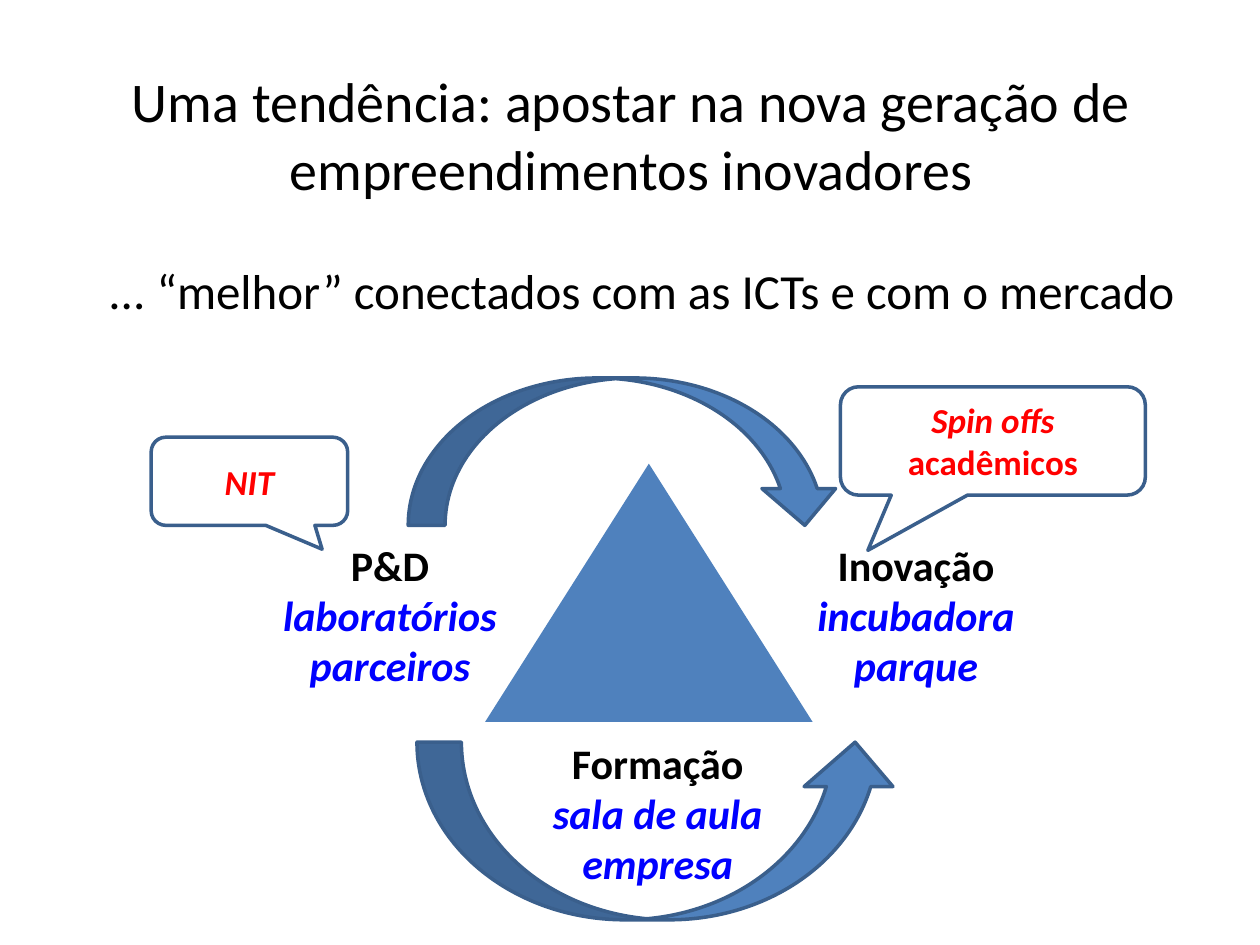
import pptx
import pptx.util
import pptx.dml.color
import pptx.enum.shapes
import pptx.enum.text

Inches = pptx.util.Inches
Kind = pptx.enum.shapes.MSO_SHAPE
Anchor = pptx.enum.text.MSO_ANCHOR
BLACK, BLUE, RED = "000000", "0000FF", "FF0000"
FILL, EDGE = "4F81BD", "3A5F8C"


def color(code):
    return pptx.dml.color.RGBColor.from_string(code)


def write(frame, *lines, size=24, wrap=True, anchor=Anchor.TOP):
    """Fill a frame; each line is a list of (text, colour, bold, italic)."""
    frame.word_wrap = wrap
    frame.vertical_anchor = anchor
    for i, line in enumerate(lines):
        para = frame.paragraphs[0] if i == 0 else frame.add_paragraph()
        para.alignment = pptx.enum.text.PP_ALIGN.CENTER
        for text, code, bold, italic in line:
            run = para.add_run()
            run.text = text
            font = run.font
            font.name, font.size = "Calibri", pptx.util.Pt(size)
            font.bold, font.italic = bold, italic
            font.color.rgb = color(code)


def draw(slide, kind, box, fill=None, edge=None):
    shape = slide.shapes.add_shape(kind, *map(Inches, box))
    shape.shadow.inherit = False
    if fill:
        shape.fill.solid()
        shape.fill.fore_color.rgb = color(fill)
    else:
        shape.fill.background()
    if edge:
        shape.line.color.rgb = color(edge)
        shape.line.width = pptx.util.Pt(2)
    else:
        shape.line.fill.background()
    return shape


def header(slide, box):
    left, top, width, height = box
    title = slide.shapes.title
    title.left, title.top = Inches(left), Inches(top)
    title.width, title.height = Inches(width), Inches(height)
    text = "Uma tendência: apostar na nova geração de empreendimentos inovadores"
    write(title.text_frame, [(text, BLACK, False, False)], size=32,
          anchor=Anchor.MIDDLE)
    lead = slide.shapes.add_textbox(
        Inches(left + 0.08), Inches(top + 1.58), Inches(width), Inches(0.82))
    text = "... “melhor” conectados com as ICTs e com o mercado"
    write(lead.text_frame, [(text, BLACK, False, False)], size=28)


def corner(slide, box, head, *items):
    label = slide.shapes.add_textbox(*map(Inches, box))
    write(label.text_frame, [(head, BLACK, True, False)],
          *([(item, BLUE, True, True)] for item in items), wrap=False)


def callout(slide, box, tip, *runs):
    shape = draw(slide, Kind.ROUNDED_RECTANGULAR_CALLOUT, box, edge=EDGE)
    shape.adjustments[0], shape.adjustments[1] = tip
    write(shape.text_frame, list(runs), size=20, anchor=Anchor.MIDDLE)


def cycle(slide, box):
    """Triangle with a label at each corner, two arrows and two callouts."""
    left, top, _, _ = box

    def at(x, y, width, height):
        return left + x, top + y, width, height

    draw(slide, Kind.FLOWCHART_EXTRACT, at(2.65, 0.68, 2.6, 2.05), FILL)
    corner(slide, at(0.94, 1.23, 1.91, 1.31),
           "P&D", "laboratórios", "parceiros")
    corner(slide, at(5.18, 1.23, 1.78, 1.31),
           "Inovação", "incubadora", "parque")
    corner(slide, at(3.08, 2.8, 1.88, 1.31),
           "Formação", "sala de aula", "empresa")
    callout(slide, at(5.47, 0.07, 2.42, 0.86), (-0.41, 1.01),
            ("Spin offs ", RED, True, True),
            ("acadêmicos", RED, True, False))
    draw(slide, Kind.CURVED_UP_ARROW, at(2.11, 2.89, 3.83, 1.41), FILL, EDGE)
    draw(slide, Kind.CURVED_DOWN_ARROW, at(2.04, 0, 3.44, 1.17), FILL, EDGE)
    callout(slide, at(0, 0.47, 1.56, 0.7), (0.37, 0.77),
            ("NIT", RED, True, True))


def main():
    deck = pptx.Presentation()
    deck.slide_width, deck.slide_height = Inches(10), Inches(7.5)
    slide = deck.slides.add_slide(deck.slide_layouts[5])
    header(slide, (0.51, 0.44, 9, 1.25))
    cycle(slide, (1.2, 3, 7.89, 4.3))
    deck.save("out.pptx")


if __name__ == "__main__":
    main()
